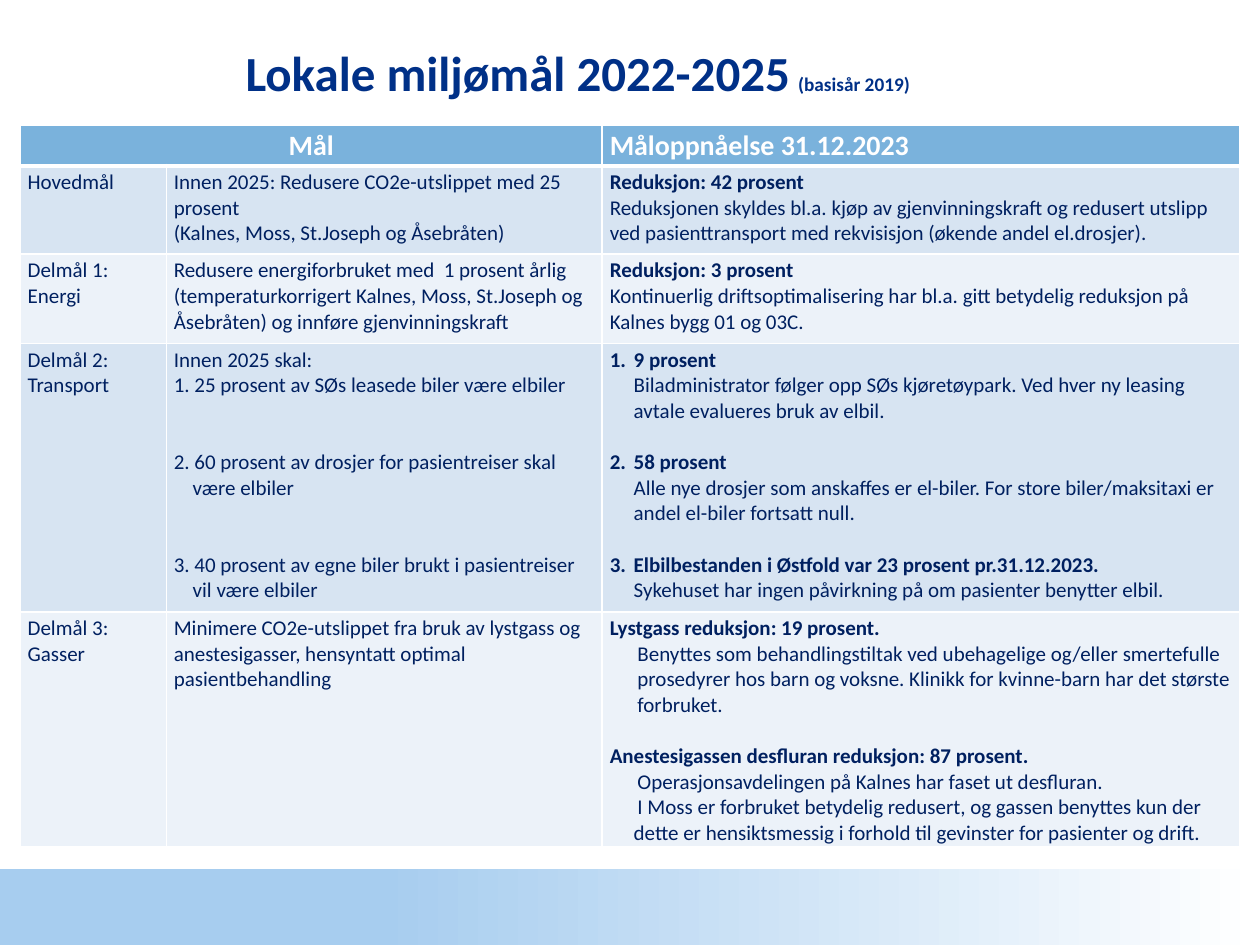
from lxml import etree
from pptx import Presentation, util as u
from pptx.dml.color import RGBColor
from pptx.enum import shapes, text as t
from pptx.oxml import ns

COLORS = {"title": "003087", "body": "002060", "white": "FFFFFF", "head": "7AB2DC",
          "odd": "D7E4F2", "even": "ECF2F9", "band": "A7CDEF"}
LINE = 14.65  # height of one 12 pt line, in points
STEP, DEEP = 0.19, 0.22  # indents in inches


def write(paragraph, content, size=12, color="body", bold=False, indent=0, hang=0, gap=0,
          align=t.PP_ALIGN.LEFT):
    """Add a run; indent and hang are in inches, gap is in lines above."""
    if indent:
        props = paragraph._p.get_or_add_pPr()
        props.set("marL", str(u.Inches(indent)))
        props.set("indent", str(-u.Inches(hang)))
    if gap:
        paragraph.space_before = u.Pt(gap * LINE)
    paragraph.alignment = align
    start = len(paragraph.runs)
    for i, line in enumerate(content.split("\n")):
        if i:
            paragraph.add_line_break()
        paragraph.add_run().text = line
    for run in paragraph.runs[start:]:
        run.font.name, run.font.size, run.font.bold = "Calibri", u.Pt(size), bold
        run.font.color.rgb = RGBColor.from_string(COLORS[color])


def add_border(cell, sides):
    """Draw white borders; sides maps L, R, T, B to widths in points."""
    props = cell._tc.get_or_add_tcPr()
    for i, (side, width) in enumerate(sides.items()):
        line = etree.Element(ns.qn(f"a:ln{side}"), w=str(u.Pt(width)))
        fill = etree.SubElement(line, ns.qn("a:solidFill"))
        etree.SubElement(fill, ns.qn("a:srgbClr"), val=COLORS["white"])
        props.insert(i, line)


BOLD = dict(bold=True)
ITEM = dict(indent=0.15, hang=0.15)
RESULT = dict(bold=True, indent=STEP, hang=STEP)
DETAIL = dict(indent=STEP)
DEEPER = dict(indent=DEEP)
HEAD = dict(size=16, color="white", bold=True)

# Each cell is a list of (text, format) paragraphs.
rows = [
    [[("Mål", HEAD | dict(align=t.PP_ALIGN.CENTER))], [], [("Måloppnåelse 31.12.2023", HEAD)]],
    [[("Hovedmål", {})],
     [("Innen 2025: Redusere CO2e-utslippet med 25 prosent", {}),
      ("(Kalnes, Moss, St.Joseph og Åsebråten)", {})],
     [("Reduksjon: 42 prosent", BOLD),
      ("Reduksjonen skyldes bl.a. kjøp av gjenvinningskraft og redusert utslipp ved "
       "pasienttransport med rekvisisjon (økende andel el.drosjer).", {})]],
    [[("Delmål 1: Energi", {})],
     [("Redusere energiforbruket med  1 prosent årlig", {}),
      ("(temperaturkorrigert Kalnes, Moss, St.Joseph og Åsebråten) og innføre "
       "gjenvinningskraft", {})],
     [("Reduksjon: 3 prosent", BOLD),
      ("Kontinuerlig driftsoptimalisering har bl.a. gitt betydelig reduksjon på Kalnes "
       "bygg 01 og 03C.", {})]],
    [[("Delmål 2: Transport", {})],
     [("Innen 2025 skal:", {}),
      ("1. 25 prosent av SØs leasede biler være elbiler", ITEM),
      ("2. 60 prosent av drosjer for pasientreiser skal\nvære elbiler", ITEM | dict(gap=2)),
      ("3. 40 prosent av egne biler brukt i pasientreiser\nvil være elbiler",
       ITEM | dict(gap=2))],
     [("1.\t9 prosent", RESULT),
      ("Biladministrator følger opp SØs kjøretøypark. Ved hver ny leasing\n"
       "avtale evalueres bruk av elbil.", DETAIL),
      ("2.\t58 prosent", RESULT | dict(gap=1)),
      ("Alle nye drosjer som anskaffes er el-biler. For store biler/maksitaxi er\n"
       "andel el-biler fortsatt null.", DETAIL),
      ("3.\tElbilbestanden i Østfold var 23 prosent pr.31.12.2023.", RESULT | dict(gap=1)),
      ("Sykehuset har ingen påvirkning på om pasienter benytter elbil.", DETAIL)]],
    [[("Delmål 3: Gasser", {})],
     [("Minimere CO2e-utslippet fra bruk av lystgass og anestesigasser, hensyntatt "
       "optimal pasientbehandling", {})],
     [("Lystgass reduksjon: 19 prosent.", BOLD),
      ("Benyttes som behandlingstiltak ved ubehagelige og/eller smertefulle\n"
       "prosedyrer hos barn og voksne. Klinikk for kvinne-barn har det største\n"
       "forbruket.", DEEPER),
      ("Anestesigassen desfluran reduksjon: 87 prosent.", BOLD | dict(gap=1)),
      ("Operasjonsavdelingen på Kalnes har faset ut desfluran.\n"
       "I Moss er forbruket betydelig redusert, og gassen benyttes kun der", DEEPER),
      ("dette er hensiktsmessig i forhold til gevinster for pasienter og drift.", DETAIL)]],
]
col_widths = [1.16, 3.46, 5.06]
row_heights = [0.32, 0.7, 0.71, 2.13, 1.85]

prs = Presentation()
prs.slide_width, prs.slide_height = u.Inches(10), u.Inches(7.5)
W, H = prs.slide_width, prs.slide_height
slide = prs.slides.add_slide(prs.slide_layouts[6])

# Footer band
band_top = int(H * 0.92)
band = slide.shapes.add_shape(shapes.MSO_SHAPE.RECTANGLE, 0, band_top, W, H - band_top)
band.shadow.inherit = False
band.line.fill.background()
band.fill.gradient()
band.fill.gradient_angle = 180
for stop, (position, color) in zip(band.fill.gradient_stops, [(0, "white"), (0.7, "band")]):
    stop.position = position
    stop.color.rgb = RGBColor.from_string(COLORS[color])

# Title
title = slide.shapes.add_textbox(u.Inches(1.85), u.Inches(0.29), u.Inches(6.02), u.Inches(0.57))
title.text_frame.word_wrap = True
for content, size in [("Lokale miljømål 2022-2025", 28), (" ", 21), ("(basisår 2019)", 11)]:
    write(title.text_frame.paragraphs[0], content, size=size, color="title", bold=True)

# Goals and results
goals = slide.shapes.add_table(len(rows), len(col_widths), u.Inches(0.16), u.Inches(0.99),
                               u.Inches(sum(col_widths)), u.Inches(sum(row_heights))).table
goals.first_row = goals.horz_banding = False
for column, width in zip(goals.columns, col_widths):
    column.width = u.Inches(width)
for r, (row, height) in enumerate(zip(rows, row_heights)):
    goals.rows[r].height = u.Inches(height)
    for c, lines in enumerate(row):
        cell = goals.cell(r, c)
        cell.margin_left = cell.margin_right = u.Inches(0.06)
        cell.margin_top = cell.margin_bottom = u.Inches(0.03)
        cell.vertical_anchor = t.MSO_ANCHOR.TOP if r else t.MSO_ANCHOR.MIDDLE
        cell.fill.solid()
        shade = ("odd" if r % 2 else "even") if r else "head"
        cell.fill.fore_color.rgb = RGBColor.from_string(COLORS[shade])
        add_border(cell, {"L": 1, "R": 1, "T": 3 if r == 1 else 1, "B": 1 if r else 3})
        for i, (content, style) in enumerate(lines):
            frame = cell.text_frame
            write(frame.add_paragraph() if i else frame.paragraphs[0], content, **style)
goals.cell(0, 0).merge(goals.cell(0, 1))

prs.save("out.pptx")
